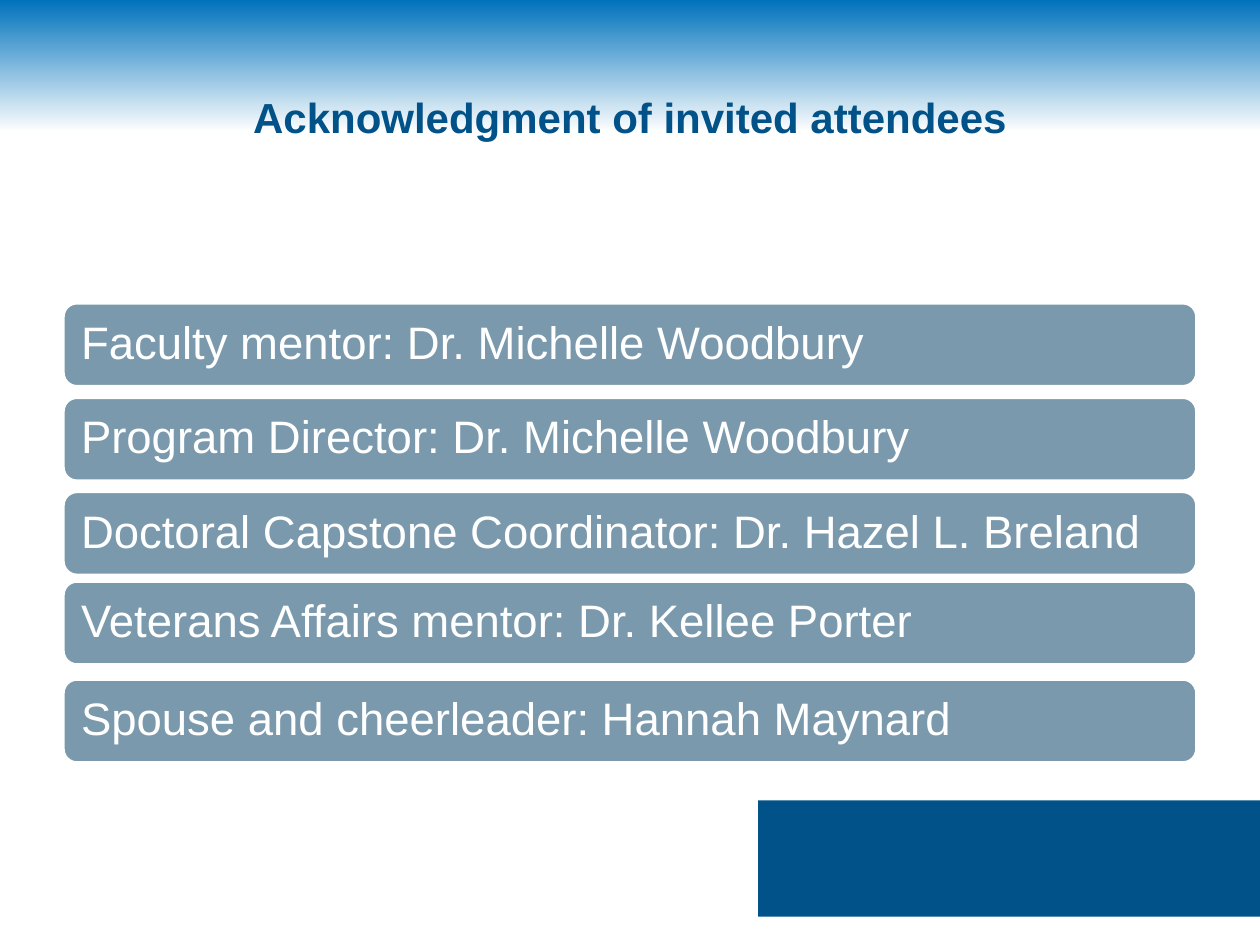
from pptx import Presentation
from pptx.dml.color import RGBColor
from pptx.enum import shapes, text
from pptx.util import Pt

NAVY, SKY, SLATE, WHITE = "005288", "0072BC", "7A99AC", "FFFFFF"
# Top of each bar in points, with the name it carries
ATTENDEES = [
    (173, "Faculty mentor: Dr. Michelle Woodbury"),
    (227, "Program Director: Dr. Michelle Woodbury"),
    (280.8, "Doctoral Capstone Coordinator: Dr. Hazel L. Breland"),
    (332, "Veterans Affairs mentor: Dr. Kellee Porter"),
    (388, "Spouse and cheerleader: Hannah Maynard"),
]


def rgb(value):
    return RGBColor.from_string(value)


def paint_background(s):
    """Fade from blue at the top edge to white just below it."""
    fill = s.background.fill
    fill.gradient()
    fill.gradient_angle = 270
    for stop, (position, color) in zip(fill.gradient_stops, [(0, SKY), (0.14, WHITE)]):
        stop.position = position
        stop.color.rgb = rgb(color)


def write(tf, content, size, color, bold=False, align=text.PP_ALIGN.LEFT):
    tf.word_wrap = True
    tf.vertical_anchor = text.MSO_ANCHOR.MIDDLE
    p = tf.paragraphs[0]
    p.alignment = align
    r = p.add_run()
    r.text = content
    r.font.name, r.font.size, r.font.bold = "Arial", Pt(size), bold
    r.font.color.rgb = rgb(color)
    return p


def add_block(s, kind, left, top, width, height, fill, line=None):
    sp = s.shapes.add_shape(kind, Pt(left), Pt(top), Pt(width), Pt(height))
    sp.shadow.inherit = False
    sp.fill.solid()
    sp.fill.fore_color.rgb = rgb(fill)
    if line:
        sp.line.color.rgb = rgb(line)
        sp.line.width = Pt(2)
    else:
        sp.line.fill.background()
    return sp


def add_title(s, content):
    sp = s.shapes.title
    sp.left, sp.top, sp.width, sp.height = Pt(36), Pt(21.6), Pt(648), Pt(90)
    write(sp.text_frame, content, 24, NAVY, bold=True, align=text.PP_ALIGN.CENTER)


def add_bar(s, top, content):
    sp = add_block(s, shapes.MSO_SHAPE.ROUNDED_RECTANGLE, 36, top, 648, 48, SLATE, WHITE)
    tf = sp.text_frame
    tf.margin_left = tf.margin_right = tf.margin_top = tf.margin_bottom = Pt(8)
    p = write(tf, content, 26, WHITE)
    p.line_spacing = 0.9


def main():
    prs = Presentation()
    prs.slide_width, prs.slide_height = Pt(720), Pt(540)
    s = prs.slides.add_slide(prs.slide_layouts[5])
    paint_background(s)
    add_block(s, shapes.MSO_SHAPE.RECTANGLE, 433.2, 457.4, 286.8, 66.4, NAVY)
    add_title(s, "Acknowledgment of invited attendees")
    for top, content in ATTENDEES:
        add_bar(s, top, content)
    prs.save("out.pptx")


if __name__ == "__main__":
    main()
